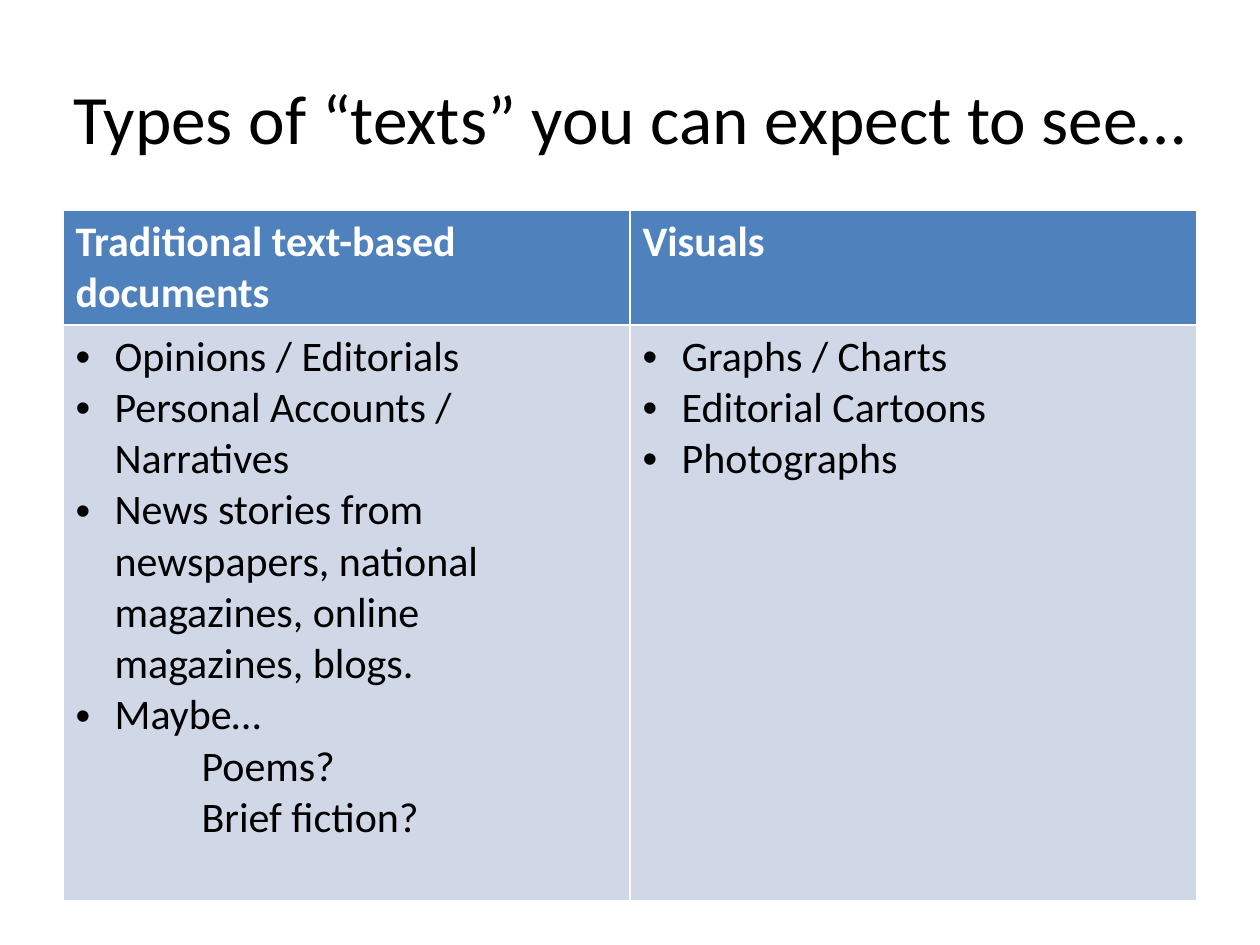
from pptx import Presentation
from pptx import util as u
from pptx.dml.color import RGBColor
from pptx.enum import text
from pptx.oxml.ns import qn

FONT = "Calibri"
HEADS = ["Traditional text-based documents", "Visuals"]
LISTS = [
    ["Opinions / Editorials", "Personal Accounts / Narratives",
     "News stories from newspapers, national magazines, online magazines, blogs.",
     "Maybe…"],
    ["Graphs / Charts", "Editorial Cartoons", "Photographs"],
]
EXTRAS = [["Poems?", "Brief fiction?"], []]


def paint(fill, color):
    fill.solid()
    fill.fore_color.rgb = RGBColor.from_string(color)


def style(para, size, color, bold=False):
    for run in para.runs:
        font = run.font
        font.name, font.size, font.bold = FONT, u.Pt(size), bold
        font.color.rgb = RGBColor.from_string(color)


def indent(para, left, bullet=False):
    props = para._p.get_or_add_pPr()
    props.set("marL", str(u.Inches(left)))
    if bullet:
        props.set("indent", str(-u.Inches(left)))
        font = props.makeelement(qn("a:buFont"), {"typeface": "Arial"})
        mark = props.makeelement(qn("a:buChar"), {"char": "•"})
        props.extend([font, mark])


def add_title(slide, words, left, top, width, height):
    box = slide.shapes.add_textbox(*map(u.Inches, (left, top, width, height)))
    frame = box.text_frame
    frame.word_wrap = True
    frame.vertical_anchor = text.MSO_ANCHOR.MIDDLE
    frame.text = words
    para = frame.paragraphs[0]
    para.alignment = text.PP_ALIGN.CENTER
    style(para, 39.6, "000000")


def fill_list(cell, items, extras):
    """Write the bulleted items, then the indented extras."""
    paint(cell.fill, "D0D8E8")
    frame = cell.text_frame
    frame.text = "\n".join(items + extras)
    for i, para in enumerate(frame.paragraphs):
        style(para, 24, "000000")
        if i < len(items):
            indent(para, 0.31, bullet=True)
        else:
            indent(para, 1)


def add_types(slide, left, top, width, height):
    box = map(u.Inches, (left, top, width, height))
    table = slide.shapes.add_table(2, len(HEADS), *box).table
    head = 0.91
    table.rows[0].height = u.Inches(head)
    table.rows[1].height = u.Inches(height - head)
    for col, name in enumerate(HEADS):
        cell = table.cell(0, col)
        paint(cell.fill, "4F81BD")
        cell.text_frame.text = name
        style(cell.text_frame.paragraphs[0], 24, "FFFFFF", bold=True)
        fill_list(table.cell(1, col), LISTS[col], EXTRAS[col])


def main():
    deck = Presentation()
    deck.slide_width, deck.slide_height = u.Inches(10), u.Inches(7.5)
    slide = deck.slides.add_slide(deck.slide_layouts[6])
    add_title(slide, "Types of “texts” you can expect to see…", 0, 0.3, 10, 1.25)
    add_types(slide, 0.5, 1.67, 9, 5.48)
    deck.save("out.pptx")


if __name__ == "__main__":
    main()
